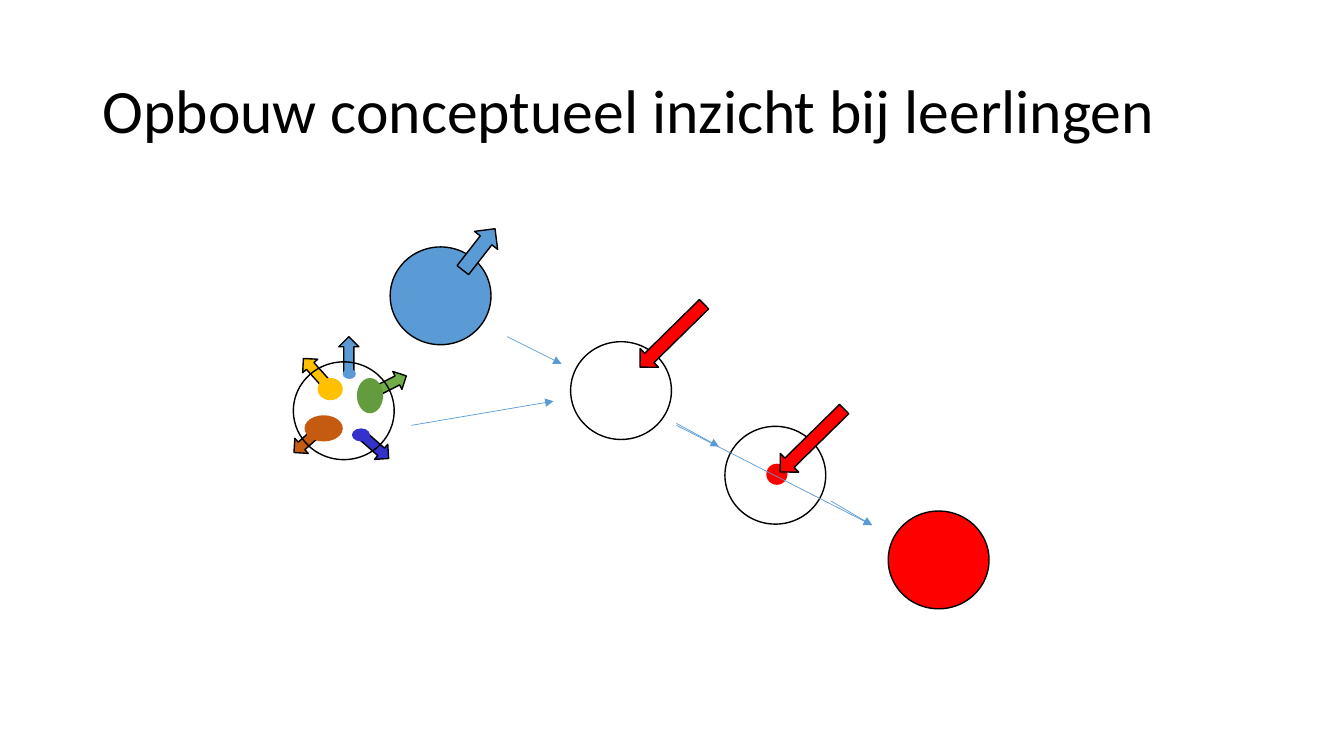
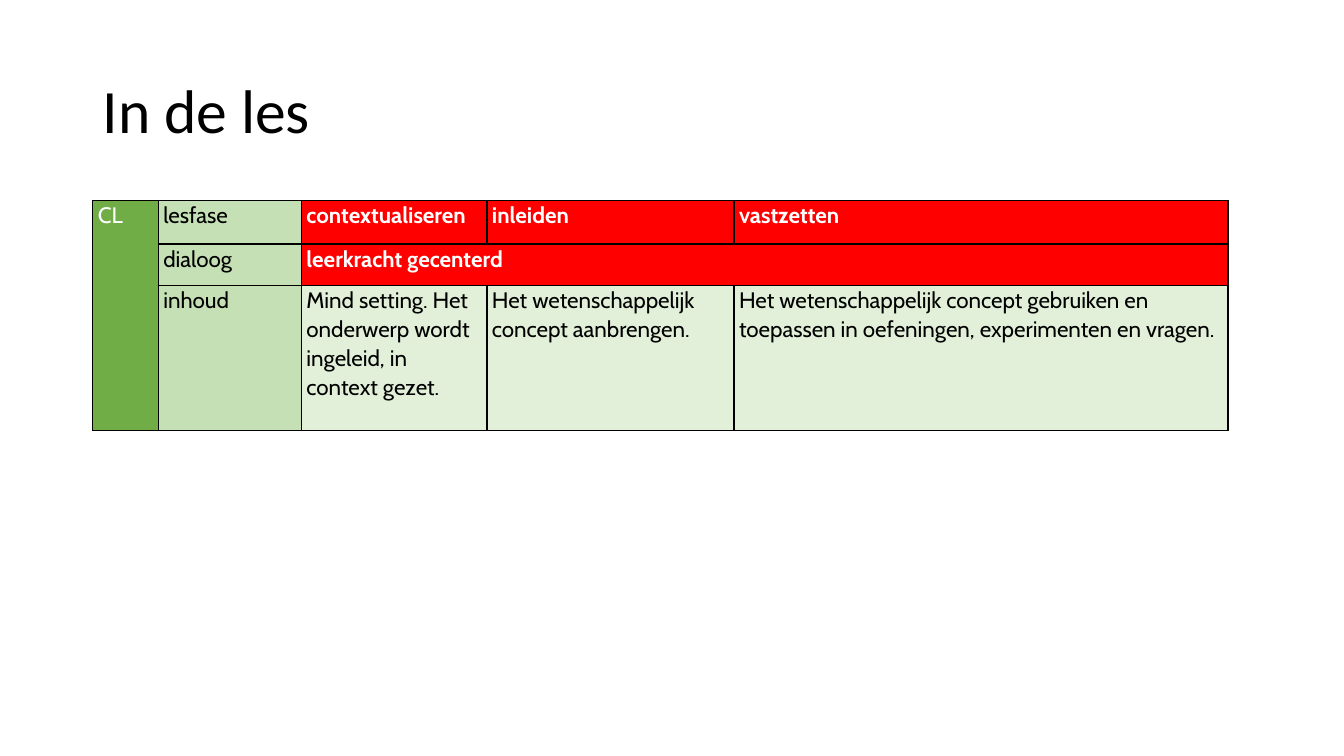
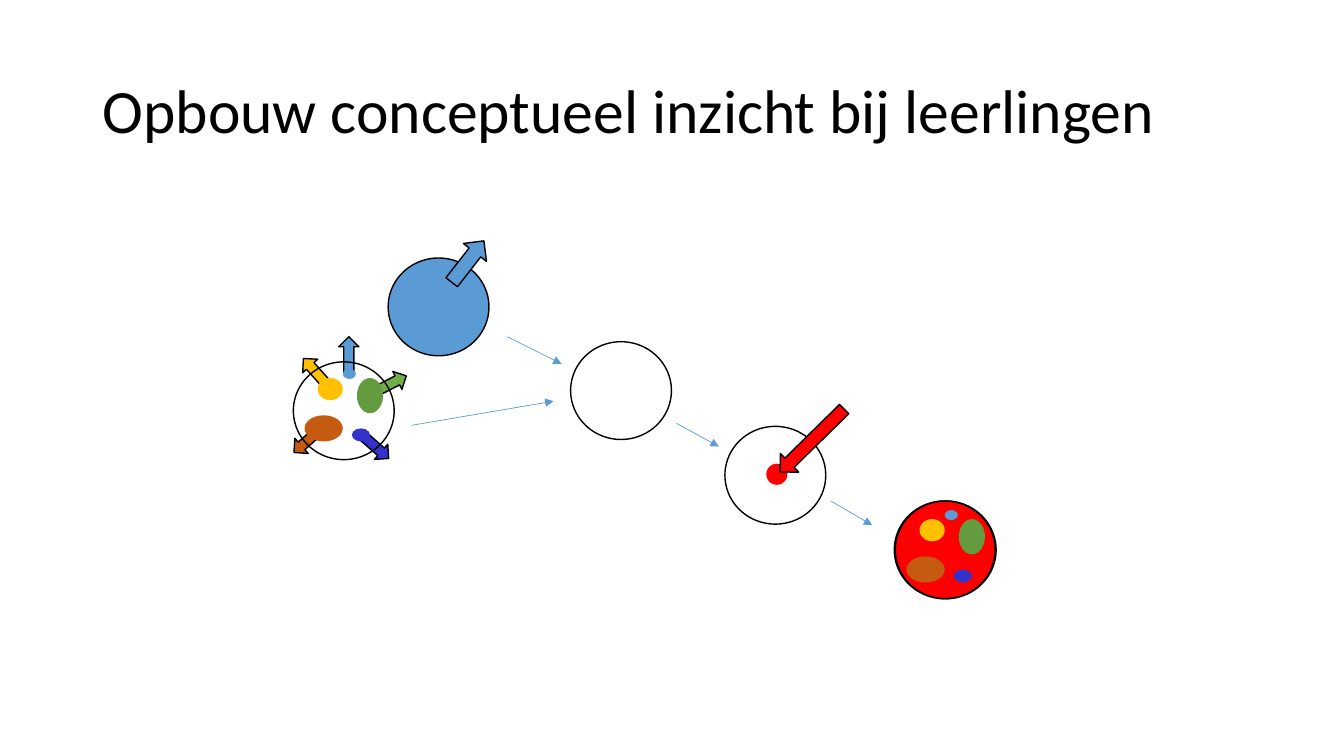
from lxml import etree
from pptx import Presentation
from pptx.dml.color import RGBColor
from pptx.enum.shapes import MSO_CONNECTOR, MSO_SHAPE
from pptx.enum.text import MSO_ANCHOR
from pptx.oxml.ns import qn
from pptx.util import Inches, Pt

OVAL, ARROW = MSO_SHAPE.OVAL, MSO_SHAPE.RIGHT_ARROW
STRAIGHT = MSO_CONNECTOR.STRAIGHT
TOP, MIDDLE = MSO_ANCHOR.TOP, MSO_ANCHOR.MIDDLE

HEX = {
    "black": "000000", "white": "FFFFFF", "red": "FF0000",
    "blue": "5B9BD5", "gold": "FFC000", "rust": "C55A11",
    "navy": "3333CC", "green": "70AD47", "moss": "649B3F",
    "pale": "C5E0B4", "mist": "E2F0D9",
}
RGB = {name: RGBColor.from_string(code) for name, code in HEX.items()}

BALL = (1, 0.97)
LONG = (0.89, 0.26)
SHORT = (0.36, 0.2)


def add_form(shapes, kind, spot, size, fill=None, edge=True, turn=0):
    """Add a preset shape, hollow without a fill and bare without an edge."""
    form = shapes.add_shape(kind, *map(Inches, spot + size))
    form.shadow.inherit = False
    form.rotation = turn
    if fill:
        form.fill.solid()
        form.fill.fore_color.rgb = RGB[fill]
    else:
        form.fill.background()
    if edge:
        form.line.color.rgb = RGB["black"]
        form.line.width = Pt(1)
    else:
        form.line.fill.background()


def add_link(shapes, start, end):
    link = shapes.add_connector(STRAIGHT, *map(Inches, start + end))
    link.line.color.rgb = RGB["blue"]
    link.line.width = Pt(0.5)
    etree.SubElement(link.line._get_or_add_ln(), qn("a:tailEnd"), type="triangle")
    etree.SubElement(link._element.spPr, qn("a:effectLst"))


deck = Presentation()
deck.slide_width, deck.slide_height = Inches(13.33), Inches(7.5)

# Titles
build = "Opbouw conceptueel inzicht bij leerlingen"
pages = []
for title in (build, "In de les", build):
    page = deck.slides.add_slide(deck.slide_layouts[6])
    box = page.shapes.add_textbox(*map(Inches, (0.92, 0.4, 11.5, 1.45)))
    frame = box.text_frame
    frame.word_wrap = True
    frame.vertical_anchor = MIDDLE
    frame.text = title
    para = frame.paragraphs[0]
    para.line_spacing = 0.9
    para.font.size = Pt(44)
    para.font.name = "Calibri"
    para.font.color.rgb = RGB["black"]
    pages.append(page.shapes)
first, lesson, last = pages

# Diagrams: what differs is the place of the first ball, its arrow and the last ball
rays = [
    ((3.28, 3.42), "blue", 270),
    ((2.95, 3.59), "gold", 228),
    ((2.87, 4.27), "rust", 138.6),
    ((3.54, 4.33), "navy", 41.3),
    ((3.69, 3.71), "green", 333),
]
dots = [
    ((3.4, 3.66), (0.13, 0.1), "blue"),
    ((3.15, 3.75), (0.25, 0.22), "gold"),
    ((3.54, 3.75), (0.26, 0.35), "moss"),
    ((3.02, 4.12), (0.38, 0.26), "rust"),
    ((3.49, 4.25), (0.18, 0.13), "navy"),
]
links = [
    ((5.03, 3.34), (5.57, 3.61)),
    ((6.71, 4.2), (7.13, 4.43)),
    ((8.24, 4.97), (8.65, 5.21)),
    ((4.08, 4.22), (5.49, 3.98)),
]
for shapes, ball, dart, goal in (
    (first, (3.87, 2.45), (4.49, 2.33), (8.81, 5.07)),
    (last, (3.85, 2.56), (4.38, 2.45), (8.88, 4.97)),
):
    add_form(shapes, OVAL, ball, BALL, "blue")
    add_form(shapes, ARROW, dart, (0.52, 0.29), "blue", turn=307.9)
    add_form(shapes, OVAL, (5.66, 3.39), BALL)

    core = shapes.add_group_shape().shapes
    add_form(core, OVAL, (7.19, 4.23), BALL)
    add_form(core, OVAL, (7.6, 4.6), (0.21, 0.21), "red", edge=False)
    add_form(core, ARROW, (7.61, 4.24), LONG, "red", turn=135.5)

    add_form(shapes, OVAL, goal, BALL, "red")
    for start, end in links:
        add_link(shapes, start, end)

    ideas = shapes.add_group_shape().shapes
    for spot, fill, turn in rays:
        add_form(ideas, ARROW, spot, SHORT, fill, turn=turn)
    add_form(ideas, OVAL, (2.91, 3.59), BALL)
    for spot, size, fill in dots:
        add_form(ideas, OVAL, spot, size, fill, edge=False)

add_link(first, (6.71, 4.22), (8.65, 5.21))
add_form(first, ARROW, (6.22, 3.2), LONG, "red", turn=135.5)

# The same dots return inside the last ball
blend = last.add_group_shape().shapes
add_form(blend, OVAL, (8.87, 4.97), BALL)
for (left, top), size, fill in dots:
    add_form(blend, OVAL, (left + 5.97, top + 1.4), size, fill, edge=False)

# Lesson table
cols = (0.65, 1.42, 1.84, 2.45, 4.9)
rows = (0.43, 0.41, 1.44)
texts = [
    ("CL", "lesfase", "contextualiseren", "inleiden", "vastzetten"),
    ("", "dialoog", "leerkracht gecenterd", "", ""),
    ("", "inhoud",
     "Mind setting. Het onderwerp wordt ingeleid, in context gezet.",
     "Het wetenschappelijk concept aanbrengen.",
     "Het wetenschappelijk concept gebruiken en toepassen in oefeningen, "
     "experimenten en vragen."),
]
place = map(Inches, (0.92, 1.99, sum(cols), sum(rows)))
table = lesson.add_table(len(rows), len(cols), *place).table
table.first_row = table.horz_banding = False
for col, width in zip(table.columns, cols):
    col.width = Inches(width)
for row, height in zip(table.rows, rows):
    row.height = Inches(height)

for r, line in enumerate(texts):
    for c, text in enumerate(line):
        cell = table.cell(r, c)
        props = cell._tc.get_or_add_tcPr()
        for side in ("lnL", "lnR", "lnT", "lnB"):
            edge = etree.SubElement(props, qn("a:" + side), w=str(Pt(1)))
            solid = etree.SubElement(edge, qn("a:solidFill"))
            etree.SubElement(solid, qn("a:srgbClr"), val=HEX["black"])
        body = "mist" if r == 2 else "red"
        fill = ("green", "pale", body, body, body)[c]
        cell.fill.solid()
        cell.fill.fore_color.rgb = RGB[fill]
        cell.margin_left = cell.margin_right = Inches(0.05)
        cell.margin_top = cell.margin_bottom = 0
        cell.vertical_anchor = TOP
        cell.text_frame.text = text
        para = cell.text_frame.paragraphs[0]
        para.line_spacing = 1.07
        para.space_after = Pt(8)
        para.font.size = Pt(16)
        para.font.name = "Cabin"
        para.font.bold = fill == "red"
        para.font.color.rgb = RGB["white" if fill in ("green", "red") else "black"]

table.cell(0, 0).merge(table.cell(2, 0))
table.cell(1, 2).merge(table.cell(1, 4))

deck.save("out.pptx")
